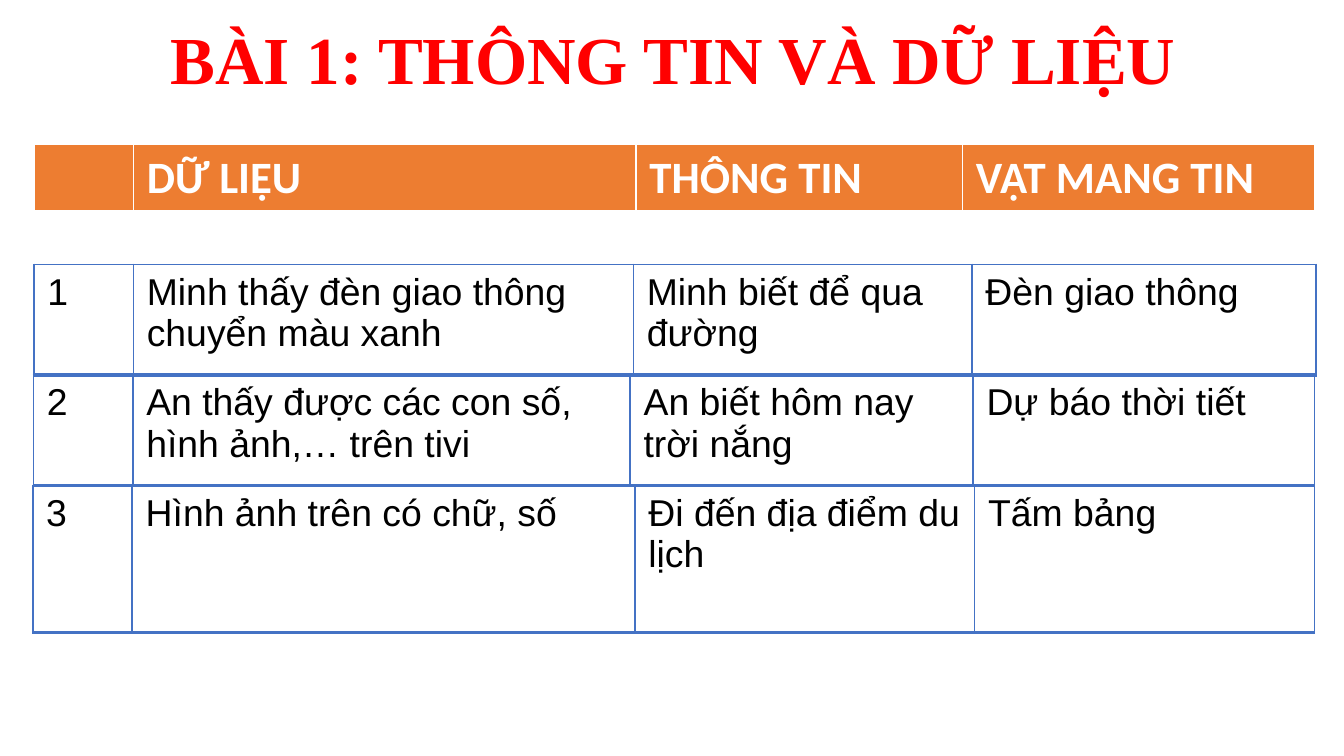
import pptx
import pptx.dml.color
import pptx.enum.text
import pptx.oxml
import pptx.oxml.ns
import pptx.util
from pptx.util import Cm

TITLE = "BÀI 1: THÔNG TIN VÀ DỮ LIỆU"

# Each band is a one-row table; lengths are in centimetres.
BANDS = [
    {"style": "header", "at": (0.64, 2.72), "height": 1.2,
     "columns": (1.88, 9.5, 6.17, 6.65),
     "texts": ("", "DỮ LIỆU", "THÔNG TIN", "VẬT MANG TIN")},
    {"style": "body", "at": (0.64, 5.0), "height": 2.09,
     "columns": (1.88, 9.45, 6.4, 6.5),
     "texts": ("1", "Minh thấy đèn giao thông chuyển màu xanh",
               "Minh biết để qua đường", "Đèn giao thông")},
    {"style": "body", "at": (0.63, 7.09), "height": 2.09,
     "columns": (1.88, 9.4, 6.48, 6.45),
     "texts": ("2", "An thấy được các con số, hình ảnh,… trên tivi",
               "An biết hôm nay trời nắng", "Dự báo thời tiết")},
    {"style": "body", "at": (0.62, 9.18), "height": 2.78,
     "columns": (1.88, 9.5, 6.42, 6.42),
     "texts": ("3", "Hình ảnh trên có chữ, số",
               "Đi đến địa điểm du lịch", "Tấm bảng")},
]

THEME = {
    "title": {"font": "Times New Roman", "size": 36, "color": "FF0000", "bold": True},
    "header": {"font": "Calibri", "size": 24, "color": "FFFFFF", "bold": True,
               "fill": "ED7D31", "border": "FFFFFF", "bottom": 3},
    "body": {"font": "Arial", "size": 20, "color": "000000", "bold": False,
             "fill": None, "border": "4472C4", "bottom": 2},
}


def add_run(paragraph, text, style):
    run = paragraph.add_run()
    run.text = text
    run.font.name = style["font"]
    run.font.size = pptx.util.Pt(style["size"])
    run.font.bold = style["bold"]
    run.font.color.rgb = pptx.dml.color.RGBColor.from_string(style["color"])


def add_borders(cell, style):
    properties = cell._tc.get_or_add_tcPr()
    for side, points in (("L", 1), ("R", 1), ("T", 1), ("B", style["bottom"])):
        properties.append(pptx.oxml.parse_xml(
            f'<a:ln{side} {pptx.oxml.ns.nsdecls("a")} w="{pptx.util.Pt(points)}">'
            f'<a:solidFill><a:srgbClr val="{style["border"]}"/></a:solidFill>'
            f'</a:ln{side}>'))


def add_band(slide, band):
    style = THEME[band["style"]]
    left, top = band["at"]
    table = slide.shapes.add_table(
        1, len(band["columns"]), Cm(left), Cm(top),
        Cm(sum(band["columns"])), Cm(band["height"])).table
    table.first_row = band["style"] == "header"
    table.horz_banding = False
    for column, width in zip(table.columns, band["columns"]):
        column.width = Cm(width)
    for cell, text in zip(table.rows[0].cells, band["texts"]):
        add_borders(cell, style)
        if style["fill"]:
            cell.fill.solid()
            cell.fill.fore_color.rgb = pptx.dml.color.RGBColor.from_string(style["fill"])
        else:
            cell.fill.background()
        if text:
            add_run(cell.text_frame.paragraphs[0], text, style)


def add_title(slide):
    title = slide.shapes.title
    title.left, title.top, title.width, title.height = Cm(1.37), Cm(0.3), Cm(22.71), Cm(1.55)
    frame = title.text_frame
    frame.margin_left = frame.margin_top = frame.margin_right = frame.margin_bottom = 0
    frame.word_wrap = True
    frame.auto_size = pptx.enum.text.MSO_AUTO_SIZE.NONE
    frame.vertical_anchor = pptx.enum.text.MSO_ANCHOR.BOTTOM
    frame.paragraphs[0].alignment = pptx.enum.text.PP_ALIGN.CENTER
    add_run(frame.paragraphs[0], TITLE, THEME["title"])


def main():
    presentation = pptx.Presentation()
    presentation.slide_width, presentation.slide_height = Cm(25.4), Cm(14.29)
    slide = presentation.slides.add_slide(presentation.slide_layouts.get_by_name("Title Only"))
    add_title(slide)
    for band in BANDS:
        add_band(slide, band)
    presentation.save("out.pptx")


if __name__ == "__main__":
    main()
